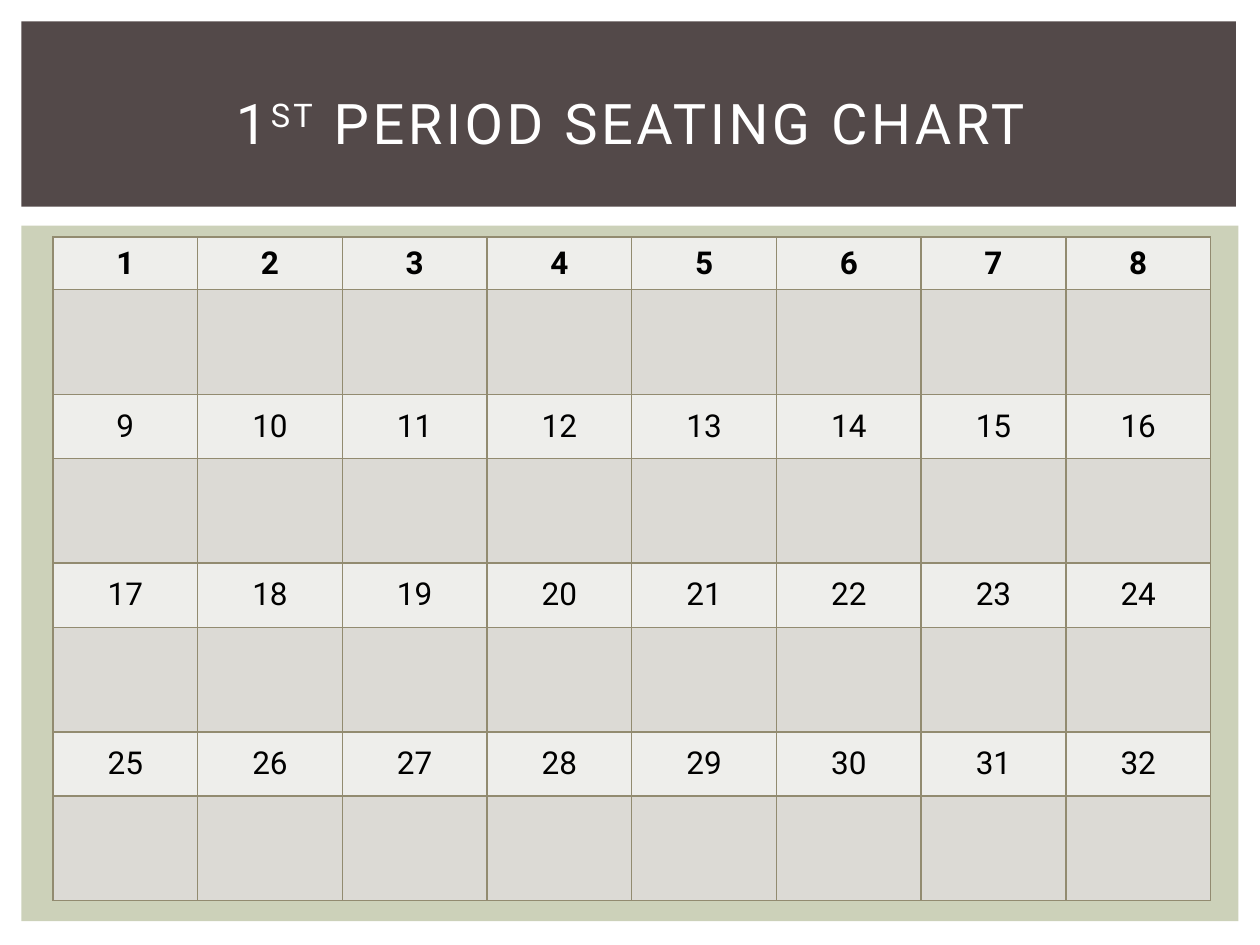
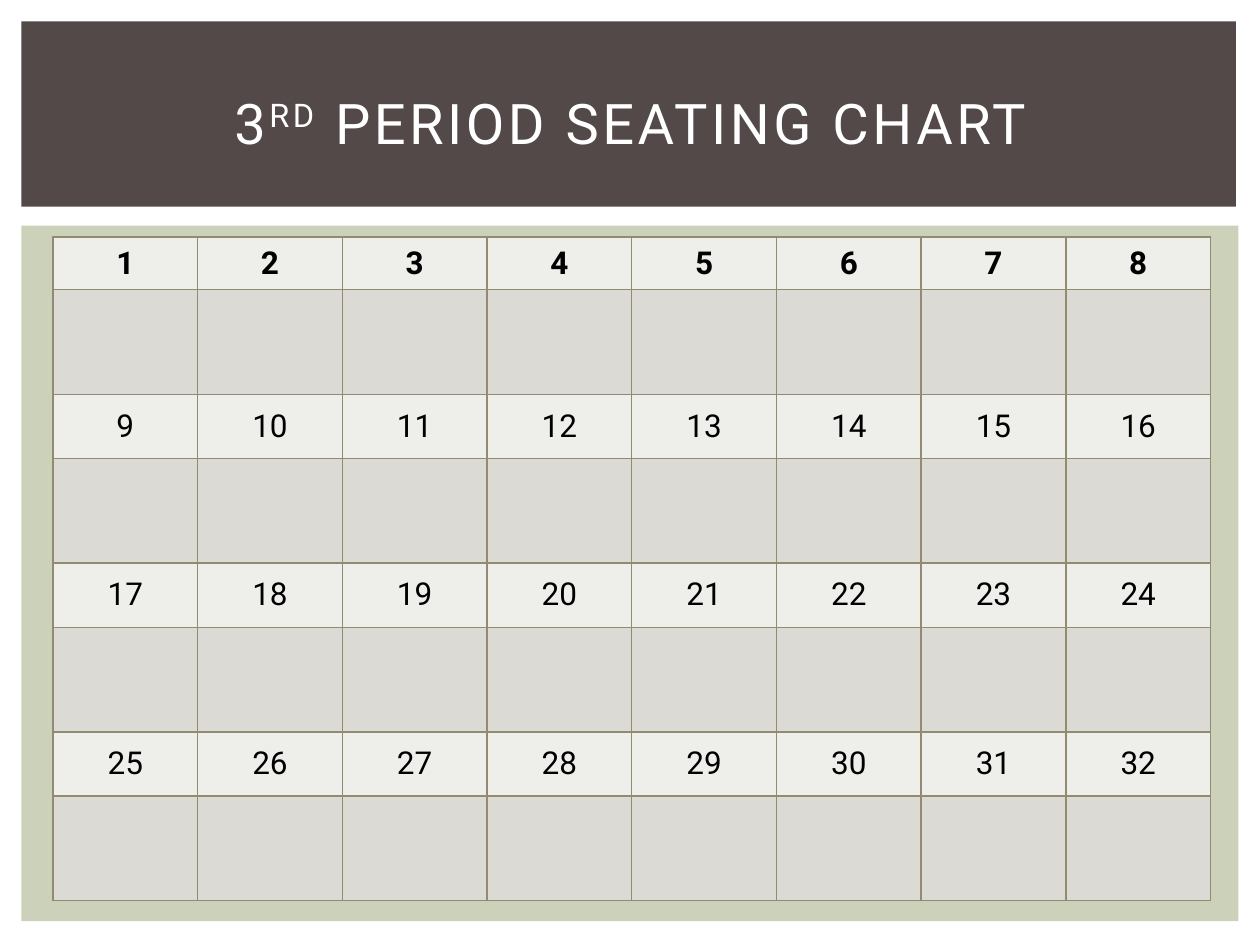
from lxml import etree
from pptx import Presentation
from pptx import util as u
from pptx.dml.color import RGBColor
from pptx.enum import shapes, text
from pptx.oxml.ns import qn

PERIODS = [("1", "ST"), ("3", "RD")]
TITLE_REST = " PERIOD SEATING CHART"
SEATS_PER_ROW, SEAT_ROWS = 8, 4

COLORS = {
    "band": "534949", "panel": "CCD1B9", "number": "EEEEEB", "seat": "DCDAD5",
    "border": "928B70", "title": "FFFFFF", "ink": "000000",
}
FONT = "Roboto"
WIDTH, HEIGHT = 10, 7.5

MARGIN = 0.17
BAND = (MARGIN, MARGIN, 9.64, 1.47)
PANEL = (MARGIN, 1.79, WIDTH - 2 * MARGIN, 5.52)
TITLE = (0.42, 0.39, 9.17, 1.15)
CHART_LEFT, CHART_TOP, CHART_WIDTH = 0.42, 1.88, 9.19
FIRST_NUMBER_HEIGHT, NUMBER_HEIGHT, SEAT_HEIGHT = 0.42, 0.51, 0.83


def inches(*lengths):
    return [u.Inches(length) for length in lengths]


def color(name):
    return RGBColor.from_string(COLORS[name])


def add_text(paragraph, words, *, size, ink, bold=False, spacing=0, raised=0):
    """Append a centred run; spacing is in points, raised in percent."""
    paragraph.alignment = text.PP_ALIGN.CENTER
    run = paragraph.add_run()
    run.text = words
    run.font.name, run.font.size, run.font.bold = FONT, u.Pt(size), bold
    run.font.color.rgb = color(ink)
    properties = run.font._element
    if spacing:
        properties.set("spc", str(spacing * 100))
    if raised:
        properties.set("baseline", str(raised * 1000))


def add_block(slide, box, fill):
    block = slide.shapes.add_shape(shapes.MSO_SHAPE.RECTANGLE, *inches(*box))
    block.shadow.inherit = False
    block.fill.solid()
    block.fill.fore_color.rgb = color(fill)
    block.line.fill.background()


def add_title(slide, number, ordinal):
    frame = slide.shapes.add_textbox(*inches(*TITLE)).text_frame
    frame.word_wrap = True
    frame.vertical_anchor = text.MSO_ANCHOR.MIDDLE
    for words, raised in ((number, 0), (ordinal, 30), (TITLE_REST, 0)):
        add_text(frame.paragraphs[0], words, size=32, ink="title", spacing=2, raised=raised)


def style_cell(cell, fill):
    cell.fill.solid()
    cell.fill.fore_color.rgb = color(fill)
    cell.vertical_anchor = text.MSO_ANCHOR.MIDDLE
    properties = cell._tc.get_or_add_tcPr()
    for position, side in enumerate(("lnL", "lnR", "lnT", "lnB")):
        line = etree.Element(qn(f"a:{side}"), w=str(u.Pt(1)))
        solid = etree.SubElement(line, qn("a:solidFill"))
        etree.SubElement(solid, qn("a:srgbClr"), val=COLORS["border"])
        properties.insert(position, line)


def add_seating_chart(slide):
    """Alternate a row of seat numbers with a row of empty seats."""
    heights = [NUMBER_HEIGHT, SEAT_HEIGHT] * SEAT_ROWS
    heights[0] = FIRST_NUMBER_HEIGHT
    box = (CHART_LEFT, CHART_TOP, CHART_WIDTH, sum(heights))
    chart = slide.shapes.add_table(len(heights), SEATS_PER_ROW, *inches(*box)).table
    chart.first_row = chart.horz_banding = False
    for column in chart.columns:
        column.width = u.Inches(CHART_WIDTH / SEATS_PER_ROW)
    for r, height in enumerate(heights):
        chart.rows[r].height = u.Inches(height)
        seat_row, is_seat = divmod(r, 2)
        for c in range(SEATS_PER_ROW):
            cell = chart.cell(r, c)
            style_cell(cell, "seat" if is_seat else "number")
            if not is_seat:
                number = seat_row * SEATS_PER_ROW + c + 1
                add_text(cell.text_frame.paragraphs[0], str(number),
                         size=18, ink="ink", bold=r == 0)


def main():
    deck = Presentation()
    deck.slide_width, deck.slide_height = inches(WIDTH, HEIGHT)
    for number, ordinal in PERIODS:
        slide = deck.slides.add_slide(deck.slide_layouts[6])
        add_block(slide, PANEL, "panel")
        add_block(slide, BAND, "band")
        add_seating_chart(slide)
        add_title(slide, number, ordinal)
    deck.save("out.pptx")


if __name__ == "__main__":
    main()
